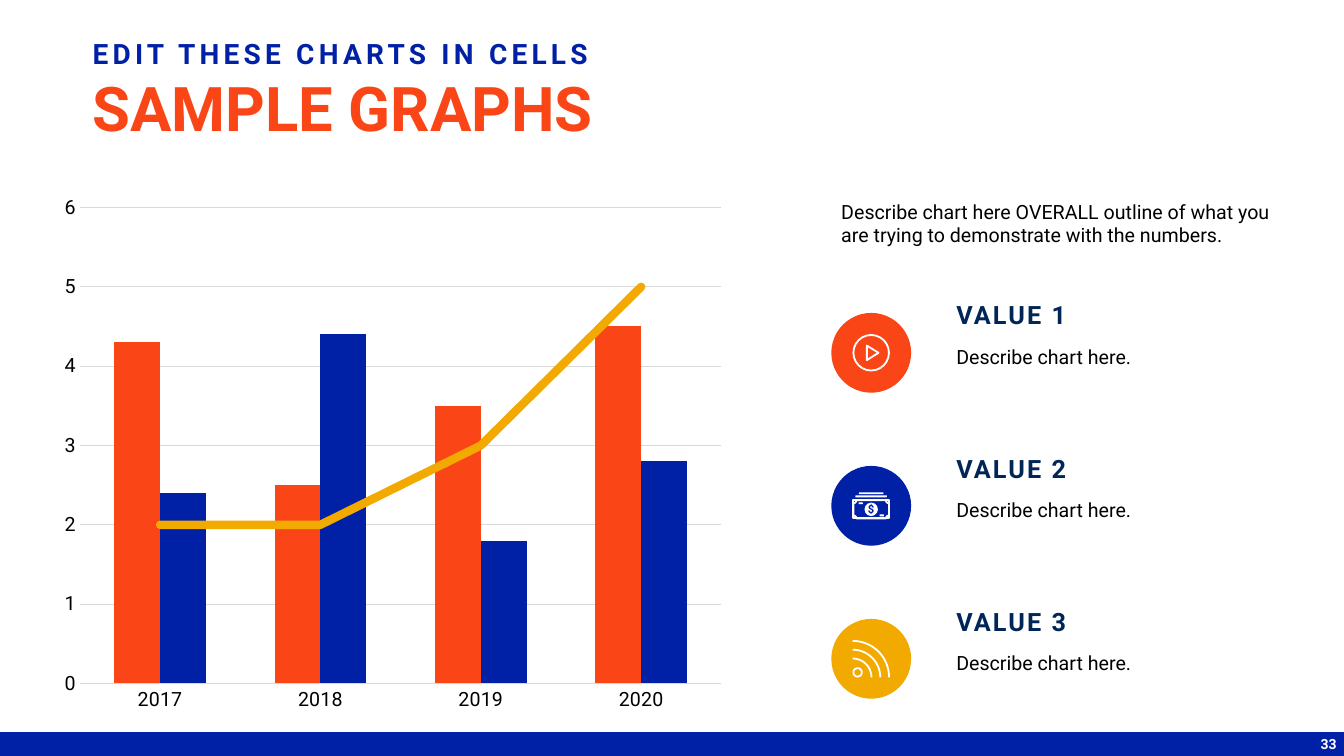
import copy
import math
from dataclasses import dataclass

import pptx
import pptx.chart.data
import pptx.enum.chart
import pptx.enum.shapes
import pptx.enum.text
import pptx.oxml
import pptx.oxml.ns
from pptx.dml.color import RGBColor

Pt = pptx.util.Pt
Shape = pptx.enum.shapes.MSO_SHAPE
Anchor = pptx.enum.text.MSO_ANCHOR
Align = pptx.enum.text.PP_ALIGN
FONT = "Roboto"
BLUE, ORANGE, GOLD = "0020A5", "FA4616", "F2A900"
NAVY, WHITE, BLACK, GRID = "002657", "FFFFFF", "000000", "D9D9D9"
BODY_INSETS = (7.2, 3.6, 7.2, 7.2)
DISC_SIZE, VALUE_PITCH, STROKE = 57, 109.3, 1.3


@dataclass
class IconPart:
    """A white piece of an icon, placed from the centre of its disc."""
    kind: Shape
    left: float
    top: float
    width: float
    height: float
    filled: bool = False
    rotation: float = 0
    text: str = ""


@dataclass
class Value:
    title: str
    color: str
    icon: list[IconPart]


def bar(left: float, top: float, width: float) -> IconPart:
    return IconPart(Shape.ROUNDED_RECTANGLE, left, top, width, STROKE, filled=True)


PLAY = [IconPart(Shape.OVAL, -12.7, -12.7, 25.4, 25.4),
        IconPart(Shape.ISOSCELES_TRIANGLE, -4.15, -4.15, 10.4, 8.3, rotation=90)]
MONEY = [IconPart(Shape.RECTANGLE, -12.7, -4, 25.4, 13),
         IconPart(Shape.PLAQUE, -12.7, -4, 25.4, 13),
         IconPart(Shape.OVAL, -4.8, -2.3, 9.6, 9.6, filled=True, text="$"),
         bar(-11.2, -7.4, 22.4), bar(-8.7, -9.6, 17.4), bar(-9, -2.4, 3), bar(6, 6.2, 3)]
VALUES = [Value("VALUE 1", ORANGE, PLAY), Value("VALUE 2", BLUE, MONEY),
          Value("VALUE 3", GOLD, [])]


def paint(fill, color: str) -> None:
    fill.solid()
    fill.fore_color.rgb = RGBColor.from_string(color)


def write(box, text: str, *, size: float, color: str = BLACK, bold: bool = False,
          spacing: float = 0, line_spacing: float = 1, align=Align.LEFT,
          anchor=Anchor.TOP, insets=(0, 0, 0, 0), wrap: bool = True) -> None:
    """Fill a shape with one formatted paragraph; insets go left, top, right, bottom."""
    frame = box.text_frame
    frame.auto_size = pptx.enum.text.MSO_AUTO_SIZE.NONE
    frame.word_wrap, frame.vertical_anchor = wrap, anchor
    (frame.margin_left, frame.margin_top,
     frame.margin_right, frame.margin_bottom) = map(Pt, insets)
    para = frame.paragraphs[0]
    para.alignment, para.line_spacing = align, line_spacing
    span = para.add_run()
    span.text = text
    span.font.name, span.font.size, span.font.bold = FONT, Pt(size), bold
    paint(span.font.fill, color)
    if spacing:
        span.font._element.set("spc", str(round(spacing * 100)))


def add_text(page, left: float, top: float, width: float, height: float,
             text: str, **style) -> None:
    write(page.shapes.add_textbox(Pt(left), Pt(top), Pt(width), Pt(height)), text, **style)


def add_shape(page, kind: Shape, left: float, top: float, width: float, height: float,
              fill: str = ""):
    """Add a plain filled shape, or a white outline if there is no fill."""
    shape = page.shapes.add_shape(kind, Pt(left), Pt(top), Pt(width), Pt(height))
    shape.shadow.inherit = False
    if fill:
        paint(shape.fill, fill)
        shape.line.fill.background()
    else:
        shape.fill.background()
        paint(shape.line.fill, WHITE)
        shape.line.width = Pt(STROKE)
    return shape


def arc(x: float, y: float, radius: float, sweep: int) -> list[tuple[int, int]]:
    """Points from the right of the centre, counter-clockwise over sweep degrees."""
    angles = [math.radians(degree) for degree in range(0, sweep + 1, 5)]
    return [(Pt(x + radius * math.cos(a)), Pt(y - radius * math.sin(a))) for a in angles]


def add_signal(page, x: float, y: float) -> None:
    """Three quarter waves and a ring around the given disc centre, as one outline."""
    half = STROKE / 2
    contours = [arc(x - 13.2, y + 13.2, radius + half, 90)
                + arc(x - 13.2, y + 13.2, radius - half, 90)[::-1]
                for radius in (13.4, 19.7, 26)]
    contours += [arc(x - 9.7, y + 9.7, 3 + half, 360),
                 arc(x - 9.7, y + 9.7, 3 - half, 360)[::-1]]
    builder = page.shapes.build_freeform(*contours[0][0])
    for contour in contours:
        builder.move_to(*contour[0])
        builder.add_line_segments(contour[1:], close=True)
    signal = builder.convert_to_shape()
    signal.shadow.inherit = False
    paint(signal.fill, WHITE)
    signal.line.fill.background()


def chart_xml(tag: str, content: str):
    return pptx.oxml.parse_xml(
        f'<c:{tag} {pptx.oxml.ns.nsdecls("c")}>{content}</c:{tag}>')


def move_last_series_to_line(chart) -> None:
    """Put the last column series in a line plot on the same axes."""
    columns = chart.element.xpath(".//c:barChart")[0]
    line_plot = chart_xml("lineChart", '<c:grouping val="standard"/>'
                          '<c:varyColors val="0"/><c:marker val="1"/>')
    series = columns.xpath("c:ser")[-1]
    for invert in series.xpath("c:invertIfNegative"):
        series.remove(invert)
    line_plot.insert(2, series)
    line_plot.extend(copy.deepcopy(axis) for axis in columns.xpath("c:axId"))
    columns.addnext(line_plot)


def fix_plot_area(chart, **fractions: float) -> None:
    area = chart.element.xpath(".//c:plotArea")[0]
    for layout in area.xpath("c:layout"):
        area.remove(layout)
    sizes = "".join(f'<c:{name} val="{size}"/>' for name, size in fractions.items())
    area.insert(0, chart_xml(
        "layout", '<c:manualLayout><c:layoutTarget val="inner"/><c:xMode val="edge"/>'
        f'<c:yMode val="edge"/>{sizes}</c:manualLayout>'))


def add_yearly_chart(page) -> None:
    data = pptx.chart.data.CategoryChartData()
    data.categories = ["2017", "2018", "2019", "2020"]
    for number, amounts in enumerate(
            [(4.3, 2.5, 3.5, 4.5), (2.4, 4.4, 1.8, 2.8), (2, 2, 3, 5)], start=1):
        data.add_series(f"Series {number}", amounts)
    chart = page.shapes.add_chart(pptx.enum.chart.XL_CHART_TYPE.COLUMN_CLUSTERED,
                                  Pt(36), Pt(132.5), Pt(489.6), Pt(383.8), data).chart
    chart.has_title = chart.has_legend = False
    chart.font.name, chart.font.size = FONT, Pt(14)
    paint(chart.font.fill, BLACK)
    fix_plot_area(chart, x=0.043, y=0.041, w=0.936, h=0.886)
    move_last_series_to_line(chart)

    columns, trend_plot = chart.plots
    columns.vary_by_categories = False
    columns.gap_width, columns.overlap = 150, 0
    for series, color in zip(columns.series, (ORANGE, BLUE)):
        paint(series.format.fill, color)
    trend = trend_plot.series[0]
    trend.smooth = False
    trend.marker.style = pptx.enum.chart.XL_MARKER_STYLE.NONE
    years, scale = chart.category_axis, chart.value_axis
    for axis in (years, scale):
        axis.major_tick_mark = axis.minor_tick_mark = pptx.enum.chart.XL_TICK_MARK.NONE
    scale.minimum_scale, scale.maximum_scale, scale.major_unit = 0, 6, 1
    for owner, color, width in ((trend, GOLD, 6), (years, GRID, 0.75),
                                (scale.major_gridlines, GRID, 0.75)):
        paint(owner.format.line.fill, color)
        owner.format.line.width = Pt(width)
    trend._element.xpath("c:spPr/a:ln")[0].set("cap", "rnd")
    scale.format.line.fill.background()


def add_value(page, value: Value, top: float) -> None:
    disc = add_shape(page, Shape.OVAL, 593.8, top, DISC_SIZE, DISC_SIZE, fill=value.color)
    x, y = disc.left.pt + DISC_SIZE / 2, top + DISC_SIZE / 2
    for part in value.icon:
        shape = add_shape(page, part.kind, x + part.left, y + part.top, part.width,
                          part.height, fill=WHITE if part.filled else "")
        shape.rotation = part.rotation
        if part.text:
            write(shape, part.text, size=8, color=value.color, bold=True,
                  align=Align.CENTER, anchor=Anchor.MIDDLE, wrap=False)
    if not value.icon:
        add_signal(page, x, y)
    add_text(page, 676, top - 13, 96, 28.8, value.title, size=18, color=NAVY, bold=True,
             spacing=1.5, anchor=Anchor.BOTTOM, insets=(7.2, 3.6, 7.2, 3.6), wrap=False)
    add_text(page, 676, top + 19.2, 247.7, 28, "Describe chart here.", size=14,
             insets=BODY_INSETS)


def main() -> None:
    deck = pptx.Presentation()
    deck.slide_width, deck.slide_height = Pt(960), Pt(540)
    page = deck.slides.add_slide(deck.slide_layouts.get_by_name("Title Only"))
    add_shape(page, Shape.RECTANGLE, 0, 523, 960, 17, fill=BLUE)
    add_text(page, 738.7, 524.9, 216, 12.2, "33", size=10, color=WHITE, bold=True,
             align=Align.RIGHT, anchor=Anchor.BOTTOM)
    title = page.shapes.title
    title.left, title.top, title.width, title.height = map(Pt, (66.2, 28.8, 828, 74.7))
    write(title, "SAMPLE GRAPHS", size=44, color=ORANGE, bold=True, line_spacing=0.9,
          anchor=Anchor.BOTTOM)
    add_text(page, 66.2, 28.8, 828, 21.6, "EDIT THESE CHARTS IN CELLS", size=20,
             color=BLUE, bold=True, spacing=3, line_spacing=0.9)
    add_yearly_chart(page)
    add_text(page, 593.8, 139, 329.8, 44.6, "Describe chart here OVERALL outline of what "
             "you are trying to demonstrate with the numbers.", size=14, insets=BODY_INSETS)
    for row, value in enumerate(VALUES):
        add_value(page, value, 223.5 + row * VALUE_PITCH)
    deck.save("out.pptx")


if __name__ == "__main__":
    main()
